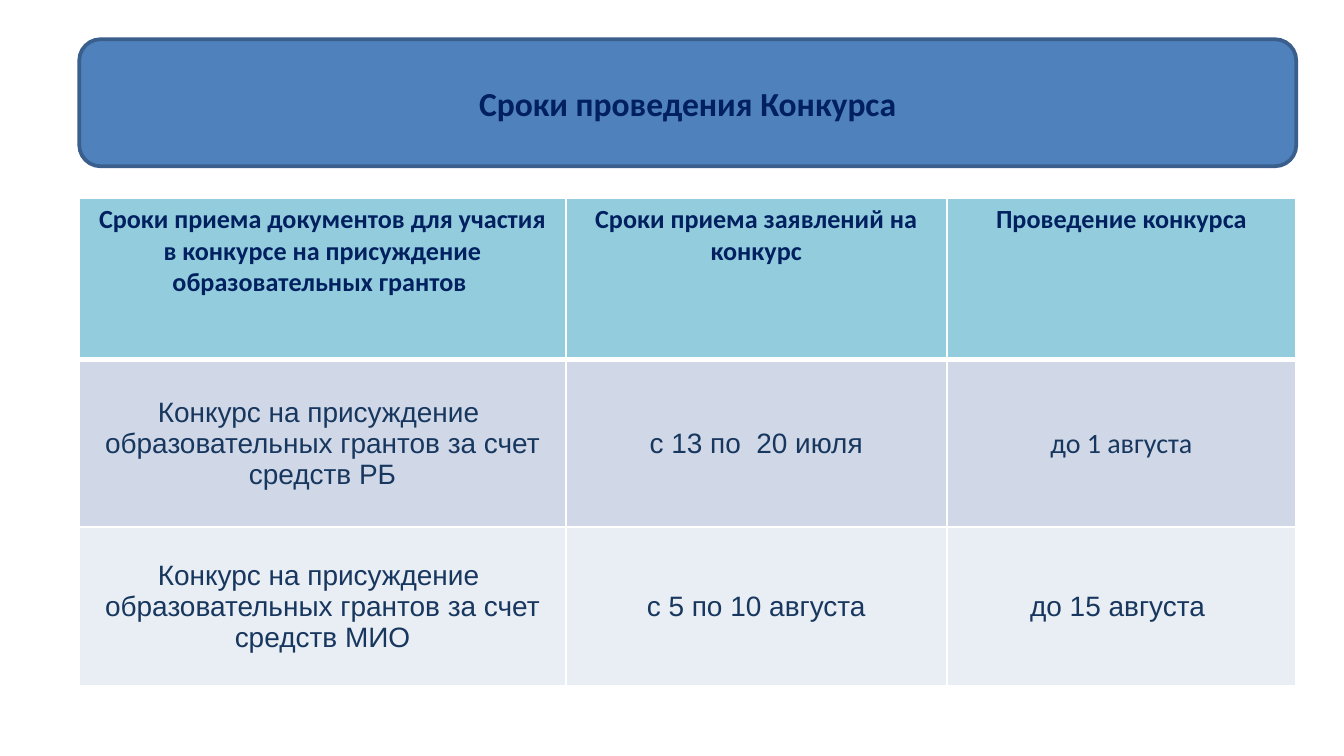
from dataclasses import dataclass

from lxml import etree
from pptx import Presentation
from pptx.dml.color import RGBColor
from pptx.enum.shapes import MSO_SHAPE
from pptx.enum.text import MSO_ANCHOR, PP_ALIGN
from pptx.oxml.ns import qn
from pptx.util import Inches, Pt

ROUNDED = MSO_SHAPE.ROUNDED_RECTANGLE
CENTER = PP_ALIGN.CENTER
TOP, MIDDLE = MSO_ANCHOR.TOP, MSO_ANCHOR.MIDDLE


@dataclass(frozen=True)
class Theme:
    banner: str = "4F81BD"
    banner_line: str = "3A5F8C"
    heading: str = "002060"
    body: str = "17375E"
    header_fill: str = "93CDDD"
    bands: tuple = ("D0D8E8", "E9EDF4")
    border: str = "FFFFFF"
    title_font: str = "Calibri"
    body_font: str = "Arial"
    title_size: int = 18
    header_size: int = 14
    body_size: int = 15


def rgb(value):
    return RGBColor.from_string(value)


def write(tf, text, *, size, color, font, bold=False):
    tf.word_wrap = True
    p = tf.paragraphs[0]
    p.alignment = CENTER
    r = p.add_run()
    r.text = text
    r.font.size, r.font.name, r.font.bold = Pt(size), font, bold
    r.font.color.rgb = rgb(color)


def set_border(cell, side, width, color):
    tc_pr = cell._tc.get_or_add_tcPr()
    ln = etree.SubElement(tc_pr, qn(f"a:ln{side}"), w=str(Pt(width)))
    fill = etree.SubElement(ln, qn("a:solidFill"))
    etree.SubElement(fill, qn("a:srgbClr"), val=color)


class SlideBuilder:
    """Places elements on a grid of 100 columns by 100 rows."""

    def __init__(self, prs, theme):
        self.theme = theme
        self.col, self.row = prs.slide_width / 100, prs.slide_height / 100
        self.s = prs.slides.add_slide(prs.slide_layouts[6])

    def box(self, x, y, w, h):
        return (round(x * self.col), round(y * self.row),
                round(w * self.col), round(h * self.row))

    def banner(self, text, *area):
        t = self.theme
        sp = self.s.shapes.add_shape(ROUNDED, *self.box(*area))
        sp.shadow.inherit = False
        sp.fill.solid()
        sp.fill.fore_color.rgb = rgb(t.banner)
        sp.line.color.rgb = rgb(t.banner_line)
        sp.line.width = Pt(2)
        sp.text_frame.vertical_anchor = MIDDLE
        write(sp.text_frame, text, size=t.title_size, color=t.heading,
              font=t.title_font, bold=True)

    def cell(self, cell, text, row, font):
        t = self.theme
        header = row == 0
        # Borders: a thick rule divides the header from the body
        widths = {"L": 1, "R": 1, "T": 3 if row == 1 else 1, "B": 3 if header else 1}
        for side, width in widths.items():
            set_border(cell, side, width, t.border)
        cell.fill.solid()
        cell.fill.fore_color.rgb = rgb(t.header_fill if header else t.bands[(row - 1) % 2])
        cell.vertical_anchor = TOP if header else MIDDLE
        cell.margin_left = cell.margin_right = Inches(0.1 if header else 0.01)
        cell.margin_top = Inches(0.04 if header else 0.01)
        cell.margin_bottom = Inches(0.04 if header else 0)
        write(cell.text_frame, text, font=font, bold=header,
              size=t.header_size if header else t.body_size,
              color=t.heading if header else t.body)

    def table(self, x, y, cols, rows, data, fonts):
        area = self.box(x, y, sum(cols), sum(rows))
        table = self.s.shapes.add_table(len(rows), len(cols), *area).table
        for column, width in zip(table.columns, cols):
            column.width = round(width * self.col)
        for row, height in zip(table.rows, rows):
            row.height = round(height * self.row)
        for i, texts in enumerate(data):
            for j, text in enumerate(texts):
                default = self.theme.body_font if i else self.theme.title_font
                self.cell(table.cell(i, j), text, i, fonts.get((i, j), default))


SCHEDULE = [
    ("Сроки приема документов для участия в конкурсе на присуждение образовательных грантов ",
     "Сроки приема заявлений на конкурс", "Проведение конкурса"),
    ("Конкурс на присуждение  образовательных грантов за счет средств РБ",
     "с 13 по  20 июля", "до 1 августа"),
    ("Конкурс на присуждение  образовательных грантов за счет средств МИО",
     "с 5 по 10 августа", "до 15 августа "),
]


def main():
    prs = Presentation()
    prs.slide_width = Inches(10)
    prs.slide_height = prs.slide_width * 9 // 16
    theme = Theme()
    slide = SlideBuilder(prs, theme)
    left, cols = 5.9, (36.2, 28.35, 26)

    # Title banner, as wide as the table
    slide.banner("Сроки проведения Конкурса", left, 5.2, sum(cols), 16.8)

    # Schedule; one date is set in the title font
    slide.table(left, 26.2, cols, (21.4, 22.1, 21), SCHEDULE,
                fonts={(1, 2): theme.title_font})

    prs.save("out.pptx")


if __name__ == "__main__":
    main()
